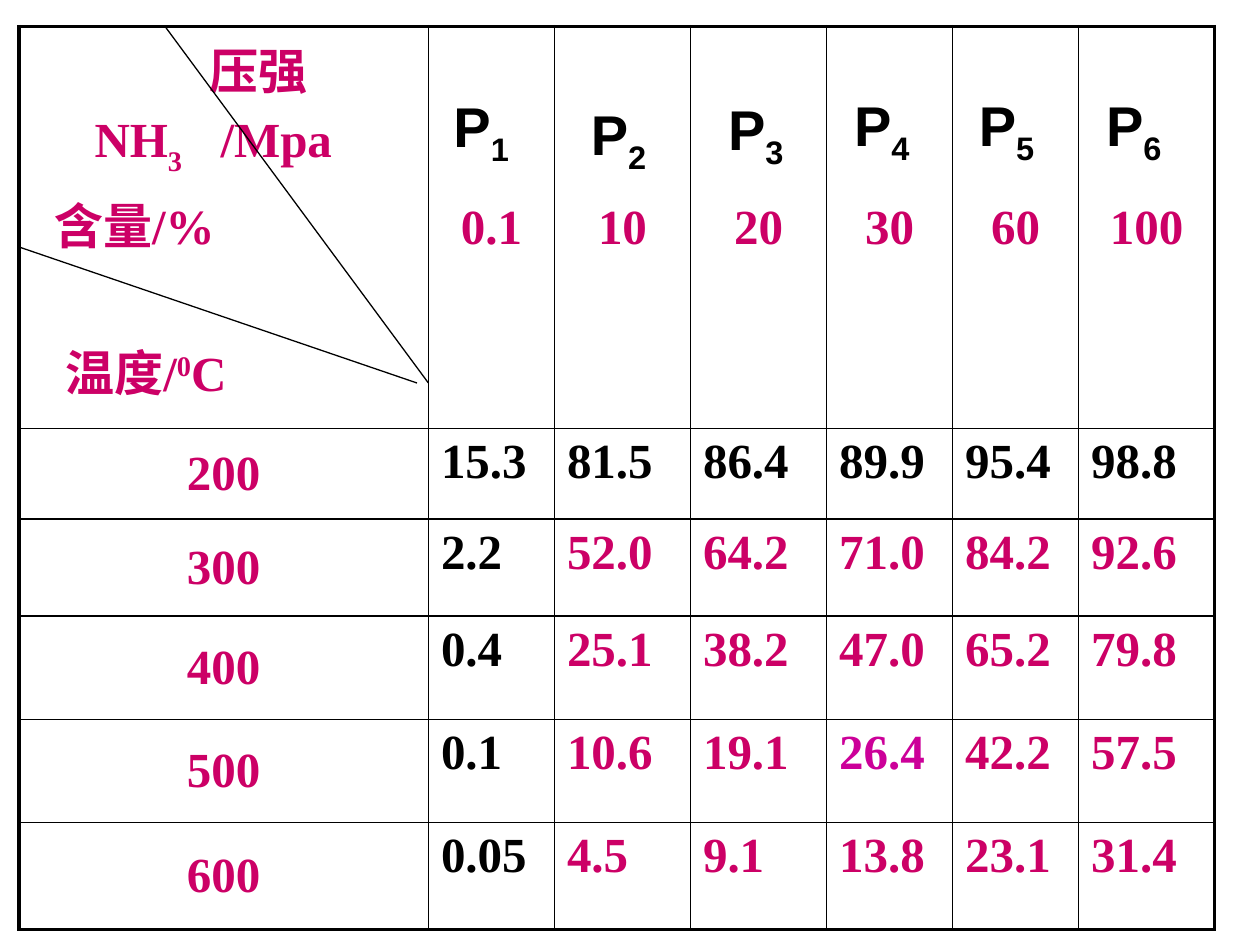
from itertools import accumulate

from lxml import etree
from pptx import Presentation
from pptx.dml.color import RGBColor
from pptx.enum.shapes import MSO_CONNECTOR
from pptx.enum.text import MSO_ANCHOR, PP_ALIGN
from pptx.oxml.ns import qn
from pptx.util import Emu, Inches, Pt

BLACK = RGBColor(0, 0, 0)
PINK = RGBColor(0xCC, 0, 0x66)
PURPLE = RGBColor(0xCC, 0, 0x99)
SANS, SERIF = "Arial", "Times New Roman"
LEFT, CENTER, JUSTIFY = PP_ALIGN.LEFT, PP_ALIGN.CENTER, PP_ALIGN.JUSTIFY
TOP, MIDDLE = MSO_ANCHOR.TOP, MSO_ANCHOR.MIDDLE
STRAIGHT = MSO_CONNECTOR.STRAIGHT

COLS = [3.25, 1, 1.08, 1.08, 1, 1, 1.08]
ROWS = [3.19, 0.72, 0.77, 0.82, 0.82, 0.85]
PRESSURES = ["0.1", "10", "20", "30", "60", "100"]
YIELDS = {
    "200": ["15.3", "81.5", "86.4", "89.9", "95.4", "98.8"],
    "300": ["2.2", "52.0", "64.2", "71.0", "84.2", "92.6"],
    "400": ["0.4", "25.1", "38.2", "47.0", "65.2", "79.8"],
    "500": ["0.1", "10.6", "19.1", "26.4", "42.2", "57.5"],
    "600": ["0.05", "4.5", "9.1", "13.8", "23.1", "31.4"],
}
LABEL_OFFSETS = [(0.1, 0.47), (0.19, 0.53), (0.2, 0.49),
                 (0.12, 0.46), (0.11, 0.46), (0.12, 0.46)]


def add_run(p, text, size=28, font=SERIF, color=PINK, base=0):
    """Add a bold run, raised or lowered by base percent."""
    r = p.add_run()
    r.text = text
    r.font.size, r.font.name, r.font.bold = Pt(size), font, True
    r.font.color.rgb = color
    if base:
        r.font._element.set("baseline", str(base * 1000))


def format_paragraph(p, align=LEFT, before=5.6, indent=0, tab=None):
    """Set alignment, space before, left indent and a tab stop."""
    p.alignment, p.space_before = align, Pt(before)
    pPr = p._p.get_or_add_pPr()
    pPr.set("marL", str(Inches(indent)))
    pPr.set("indent", "0")
    if tab:
        tabs = etree.SubElement(pPr, qn("a:tabLst"))
        for pos in (0.19, tab):
            etree.SubElement(tabs, qn("a:tab"), pos=str(Inches(pos)), algn="l")


def set_borders(cell, row, col):
    """Draw thick lines on the table's outer edge and thin ones inside."""
    tcPr = cell._tc.get_or_add_tcPr()
    outer = {"lnL": col == 0, "lnR": col == len(COLS) - 1,
             "lnT": row == 0, "lnB": row == len(ROWS) - 1}
    for i, (tag, thick) in enumerate(outer.items()):
        ln = etree.Element(qn("a:" + tag), w=str(Pt(2.25 if thick else 1)))
        fill = etree.SubElement(ln, qn("a:solidFill"))
        etree.SubElement(fill, qn("a:srgbClr"), val=str(BLACK))
        tcPr.insert(i, ln)


def fill_corner(cell):
    """Write the three axis names in the corner cell."""
    lines = [
        (dict(indent=1.41), [("压强", dict(font=SANS))]),
        (dict(tab=1.85), [("\tNH", {}), ("3", dict(base=-30)), ("\t/Mpa", {})]),
        (dict(indent=0.18), [("含量", dict(font=SANS)), ("/%", {})]),
        (dict(indent=0.27, before=43.4),
         [("温度", dict(font=SANS)), ("/", {}), ("0", dict(base=30)), ("C", {})]),
    ]
    tf = cell.text_frame
    for i, (layout, runs) in enumerate(lines):
        p = tf.add_paragraph() if i else tf.paragraphs[0]
        format_paragraph(p, JUSTIFY, **layout)
        for text, fmt in runs:
            add_run(p, text, **fmt)


def value_color(row, col):
    """Return black for the first data row and column, purple for 26.4."""
    if row and col and (row == 1 or col == 1):
        return BLACK
    return PURPLE if (row, col) == (4, 4) else PINK


def add_yield_table(s, x, y):
    """Place the table of ammonia content by temperature and pressure."""
    frame = s.shapes.add_table(len(ROWS), len(COLS), Inches(x), Inches(y),
                               Inches(sum(COLS)), Inches(sum(ROWS)))
    table = frame.table
    table.first_row = table.horz_banding = False
    for column, width in zip(table.columns, COLS):
        column.width = Inches(width)
    for line, height in zip(table.rows, ROWS):
        line.height = Inches(height)
    data = [[None] + PRESSURES] + [[t] + v for t, v in YIELDS.items()]
    for row, values in enumerate(data):
        for col, text in enumerate(values):
            cell = table.cell(row, col)
            cell.fill.background()
            set_borders(cell, row, col)
            if text is None:
                fill_corner(cell)
                continue
            heading = row == 0 or col == 0
            cell.vertical_anchor = MIDDLE if heading else TOP
            p = cell.text_frame.paragraphs[0]
            format_paragraph(p, CENTER if heading else LEFT)
            add_run(p, text, color=value_color(row, col))


def add_corner_lines(s, x, y):
    """Divide the corner cell with two slanting lines."""
    for x1, y1, x2, y2 in [(1.16, 0, 3.25, 2.83), (0, 1.75, 3.16, 2.83)]:
        line = s.shapes.add_connector(STRAIGHT, Inches(x + x1), Inches(y + y1),
                                      Inches(x + x2), Inches(y + y2))
        line.line.color.rgb, line.line.width = BLACK, Pt(0.75)
        etree.SubElement(line._element.spPr, qn("a:effectLst"))


def add_pressure_labels(s, x, y):
    """Place P1 to P6 above the pressures."""
    for n, (start, (dx, dy)) in enumerate(zip(accumulate(COLS), LABEL_OFFSETS), 1):
        tb = s.shapes.add_textbox(Inches(x + start + dx), Inches(y + dy),
                                  Inches(0.79), Inches(0.72))
        tb.text_frame.word_wrap = True
        p = tb.text_frame.paragraphs[0]
        add_run(p, "P", size=32, font=SANS, color=BLACK)
        add_run(p, str(n), size=32, font=SANS, color=BLACK, base=-25)


def main():
    """Build the slide and save it."""
    prs = Presentation()
    prs.slide_width, prs.slide_height = Inches(10), Inches(7.5)
    s = prs.slides.add_slide(prs.slide_layouts[6])
    for add_part in (add_yield_table, add_corner_lines, add_pressure_labels):
        add_part(s, 0.15, 0.21)
    prs.save("out.pptx")


if __name__ == "__main__":
    main()
